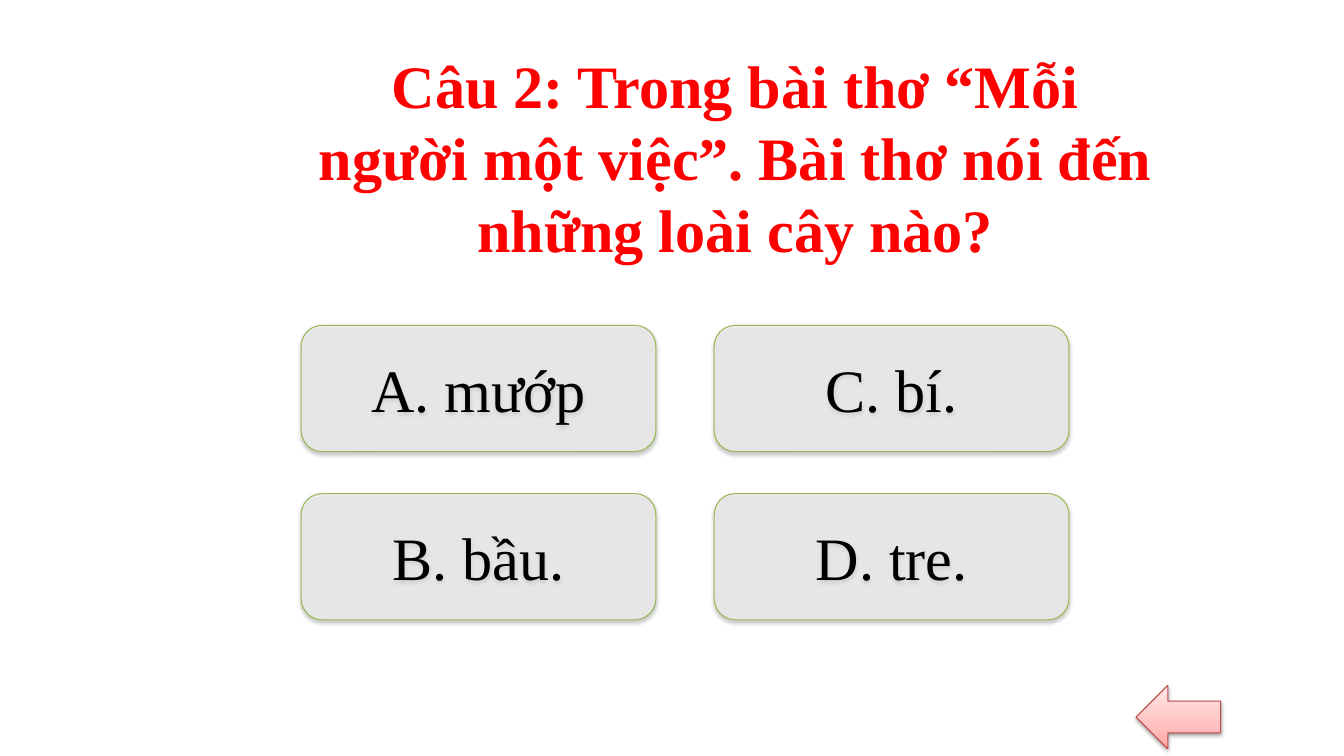
"""Build a quiz slide with one question, four answers and a back arrow."""
from copy import deepcopy

from lxml import etree
from pptx import Presentation
from pptx import util as u
from pptx.dml.color import RGBColor
from pptx.enum import shapes, text
from pptx.oxml.ns import qn

QUESTION = "Câu 2: Trong bài thơ “Mỗi người một việc”. Bài thơ nói đến những loài cây nào?"
ANSWER_COLUMNS = [["A. mướp", "B. bầu."], ["C. bí.", "D. tre."]]

COLORS = {
    "question": "FF0000",
    "answer": "000000",
    "button": "FFFFFF",
    "button_line": "98B955",
    "arrow_line": "BF4C48",
    "shadow": "000000",
}
ARROW_STOPS = [(0, "FFA6A5"), (0.35, "FFC0BF"), (1, "FFE7E7")]
FONT = "Times New Roman"
FONT_SIZE = u.Pt(43)

LEFT = u.Cm(7.59)
QUESTION_BOX = (LEFT, u.Cm(1.04), u.Cm(21.87), u.Cm(5.82))
ARROW_BOX = (u.Cm(28.63), u.Cm(17.27), u.Cm(2.13), u.Cm(1.6))
BUTTON_TOP = u.Cm(8.2)
BUTTON_WIDTH, BUTTON_HEIGHT = u.Cm(8.94), u.Cm(3.18)
COLUMN_STEP, ROW_STEP = u.Cm(10.41), u.Cm(4.24)


def write(shape, words, color, bold=False):
    """Put one centred paragraph into a shape."""
    frame = shape.text_frame
    frame.word_wrap = True
    frame.margin_left = frame.margin_right = u.Cm(0.34)
    frame.margin_top = frame.margin_bottom = u.Cm(0.17)
    frame.text = words
    paragraph = frame.paragraphs[0]
    paragraph.alignment = text.PP_ALIGN.CENTER
    font = paragraph.runs[0].font
    font.name, font.size, font.bold = FONT, FONT_SIZE, bold
    font.color.rgb = RGBColor.from_string(color)


def add_outlined(slide, kind, box, line_color):
    """Add a preset shape with a thin line and a soft shadow below."""
    shape = slide.shapes.add_shape(kind, *box)
    shape.line.color.rgb = RGBColor.from_string(line_color)
    shape.line.width = u.Pt(0.75)
    shape.shadow.inherit = False
    effects = shape._element.spPr.find(qn("a:effectLst"))
    shadow = etree.SubElement(
        effects, qn("a:outerShdw"), blurRad=str(u.Pt(3.1)), dist=str(u.Pt(1.6)),
        dir="5400000", rotWithShape="0")
    color = etree.SubElement(shadow, qn("a:srgbClr"), val=COLORS["shadow"])
    etree.SubElement(color, qn("a:alpha"), val="38000")
    return shape


def add_button(slide, column, row, words):
    """Add a half-transparent answer button at its place in the grid."""
    box = (LEFT + column * COLUMN_STEP, BUTTON_TOP + row * ROW_STEP,
           BUTTON_WIDTH, BUTTON_HEIGHT)
    button = add_outlined(slide, shapes.MSO_SHAPE.ROUNDED_RECTANGLE, box,
                          COLORS["button_line"])
    button.fill.solid()
    button.fill.fore_color.rgb = RGBColor.from_string(COLORS["button"])
    color = button._element.spPr.find(qn("a:solidFill")).find(qn("a:srgbClr"))
    etree.SubElement(color, qn("a:alpha"), val="50000")
    write(button, words, COLORS["answer"])
    button.text_frame.vertical_anchor = text.MSO_ANCHOR.MIDDLE


def add_back_arrow(slide):
    """Add the left arrow with its three-stop gradient."""
    arrow = add_outlined(slide, shapes.MSO_SHAPE.LEFT_ARROW, ARROW_BOX,
                         COLORS["arrow_line"])
    arrow.fill.gradient()
    arrow.fill.gradient_angle = 90
    stop_list = arrow._element.spPr.find(qn("a:gradFill")).find(qn("a:gsLst"))
    stop_list.append(deepcopy(stop_list[0]))
    for stop, (position, color) in zip(arrow.fill.gradient_stops, ARROW_STOPS):
        stop.position = position
        stop.color.rgb = RGBColor.from_string(color)


def main():
    """Compose the slide and save it."""
    presentation = Presentation()
    presentation.slide_width = u.Cm(33.87)
    presentation.slide_height = u.Cm(19.05)
    slide = presentation.slides.add_slide(presentation.slide_layouts[6])
    question = slide.shapes.add_textbox(*QUESTION_BOX)
    write(question, QUESTION, COLORS["question"], bold=True)
    question.text_frame.auto_size = text.MSO_AUTO_SIZE.SHAPE_TO_FIT_TEXT
    add_back_arrow(slide)
    for column, answers in enumerate(ANSWER_COLUMNS):
        for row, words in enumerate(answers):
            add_button(slide, column, row, words)
    presentation.save("out.pptx")


if __name__ == "__main__":
    main()
